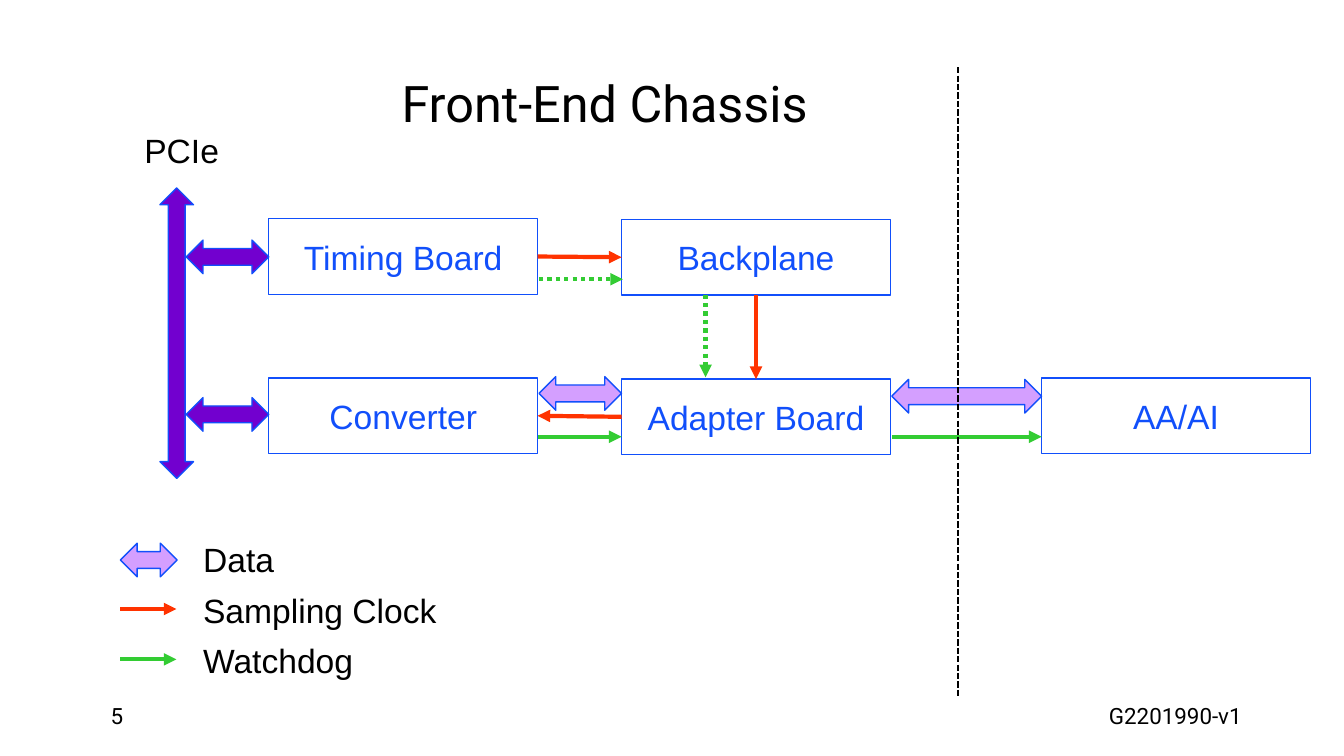
from lxml.etree import SubElement
from pptx import Presentation
from pptx.dml.color import RGBColor
from pptx.enum.dml import MSO_LINE
from pptx.enum.shapes import MSO_CONNECTOR, MSO_SHAPE
from pptx.enum.text import MSO_ANCHOR, PP_ALIGN
from pptx.oxml.ns import qn
from pptx.util import Pt

COLORS = {
    "text": "000000",
    "outline": "114FFB",
    "clock": "FF3300",
    "watchdog": "33CC33",
    "data": "D49FFF",
    "bus": "7200CF",
}
TOP, LEFT, BOTTOM, RIGHT = range(4)
BOARD_WIDTH, BOARD_HEIGHT = 192, 54
ARROW_HEIGHT = 24


def rgb(color):
    return RGBColor.from_string(COLORS[color])


def write(frame, text, size, font, color, align):
    frame.word_wrap = True
    frame.text = text
    paragraph = frame.paragraphs[0]
    paragraph.alignment = align
    style = paragraph.runs[0].font
    style.size = Pt(size)
    style.name = font
    style.color.rgb = rgb(color)


def add_label(slide, text, left, top, width, height, size=24, font="Arial",
              align=PP_ALIGN.LEFT, anchor=MSO_ANCHOR.TOP):
    label = slide.shapes.add_textbox(Pt(left), Pt(top), Pt(width), Pt(height))
    label.text_frame.vertical_anchor = anchor
    write(label.text_frame, text, size, font, "text", align)


def add_outlined(slide, kind, left, top, width, height):
    shape = slide.shapes.add_shape(kind, Pt(left), Pt(top), Pt(width), Pt(height))
    shape.shadow.inherit = False
    shape.line.color.rgb = rgb("outline")
    shape.line.width = Pt(1)
    return shape


def add_board(slide, text, left, top):
    board = add_outlined(slide, MSO_SHAPE.RECTANGLE, left, top,
                         BOARD_WIDTH, BOARD_HEIGHT)
    board.fill.background()
    board.text_frame.vertical_anchor = MSO_ANCHOR.MIDDLE
    write(board.text_frame, text, 24, "Arial", "outline", PP_ALIGN.CENTER)
    return board


def add_block_arrow(slide, color, left, top, width, rotation=0):
    arrow = add_outlined(slide, MSO_SHAPE.LEFT_RIGHT_ARROW, left, top,
                         width, ARROW_HEIGHT)
    arrow.fill.solid()
    arrow.fill.fore_color.rgb = rgb(color)
    arrow.rotation = rotation


def add_line(slide, color, start=(0, 0), end=(0, 0), width=3, dash=None, head=True):
    line = slide.shapes.add_connector(
        MSO_CONNECTOR.STRAIGHT, *(Pt(value) for value in (*start, *end)))
    line.line.color.rgb = rgb(color)
    line.line.width = Pt(width)
    if dash:
        line.line.dash_style = dash
    properties = line._element.spPr
    if head:
        SubElement(properties.find(qn("a:ln")), qn("a:tailEnd"), type="triangle")
    SubElement(properties, qn("a:effectLst"))
    return line


def join_clock(slide, source, source_side, target, target_side):
    clock = add_line(slide, "clock")
    clock.begin_connect(source, source_side)
    clock.end_connect(target, target_side)


def add_legend(slide):
    add_block_arrow(slide, "data", 86, 388, 40.5)
    for row, name in enumerate(("Data", "Sampling Clock", "Watchdog")):
        add_label(slide, name, 138, 381.5 + 36 * row, 210, 36)
    for color, y in (("clock", 435), ("watchdog", 471)):
        add_line(slide, color, (86, y), (126, y))


def main():
    presentation = Presentation()
    presentation.slide_width = Pt(960)
    presentation.slide_height = Pt(540)
    slide = presentation.slides.add_slide(presentation.slide_layouts[6])

    add_label(slide, "G2201990-v1", 750, 498, 144, 27, 16, "Roboto", PP_ALIGN.RIGHT)
    add_label(slide, "5", 72, 498, 102, 27, 16, "Roboto")
    add_label(slide, "Front-End Chassis", 72, 41, 720, 57, 36, "Roboto",
              PP_ALIGN.CENTER, MSO_ANCHOR.BOTTOM)

    timing = add_board(slide, "Timing Board", 192, 156.25)
    backplane = add_board(slide, "Backplane", 444, 156.75)
    adapter = add_board(slide, "Adapter Board", 444, 270.75)
    converter = add_board(slide, "Converter", 192, 270)
    add_board(slide, "AA/AI", 744, 270)

    join_clock(slide, timing, RIGHT, backplane, LEFT)
    join_clock(slide, backplane, BOTTOM, adapter, TOP)
    join_clock(slide, adapter, LEFT, converter, RIGHT)

    add_block_arrow(slide, "data", 385, 269, 59)
    add_block_arrow(slide, "data", 637, 271, 107)
    for left, right in ((384, 444), (637, 744)):
        add_line(slide, "watchdog", (left, 312), (right, 312))

    add_legend(slide)
    add_line(slide, "text", (684, 48), (684, 498), 1.5, MSO_LINE.SQUARE_DOT, head=False)

    for top in (284, 171.5):
        add_block_arrow(slide, "bus", 133, top, 59)
    add_block_arrow(slide, "bus", 22.5, 226, 207.5, rotation=270)
    add_label(slide, "PCIe", 96, 89.5, 72, 36)

    for start, end in (((385, 199.5), (445, 199.5)), ((504, 210.5), (504, 269.5))):
        add_line(slide, "watchdog", start, end, dash=MSO_LINE.ROUND_DOT)

    presentation.save("out.pptx")


if __name__ == "__main__":
    main()
